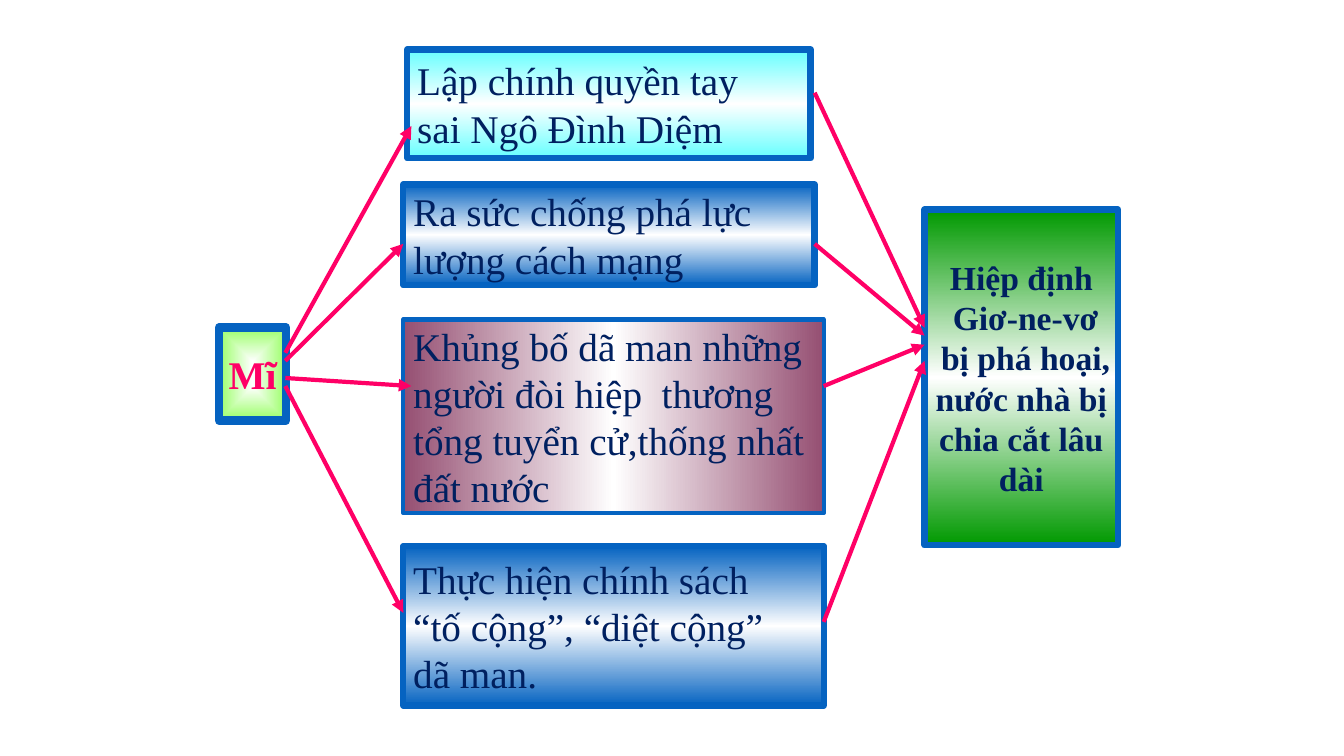
from pptx import Presentation
from pptx.dml.color import RGBColor
from pptx.enum.shapes import MSO_CONNECTOR, MSO_SHAPE
from pptx.enum.text import MSO_ANCHOR, PP_ALIGN
from pptx.oxml import parse_xml
from pptx.oxml.ns import nsdecls, qn
from pptx.util import Inches, Pt

THEME = {
    "font": "Times New Roman",
    "border": "0563C1", "ink": "002060", "accent": "FF0066", "white": "FFFFFF",
    "lime": "99FF66", "cyan": "66FFFF", "plum": "954F72", "green": "009900",
    "large": 28, "medium": 24, "arrow": 3,
}

# Boxes: place (left, top, width, height), tint, gradient, border width, lines
CAUSE = {
    "place": (2.17, 3.25, 0.67, 0.92), "tint": "lime", "gradient": "centre",
    "border": 6, "lines": ["Mĩ"],
}
ACTIONS = [
    {"place": (4.04, 0.49, 4, 1.08), "tint": "cyan", "gradient": "vertical",
     "border": 4.5, "lines": ["Lập chính quyền tay", "sai Ngô Đình Diệm"]},
    {"place": (4, 1.83, 4.08, 1), "tint": "border", "gradient": "vertical",
     "border": 4.5, "lines": ["Ra sức chống phá lực", "lượng cách mạng"]},
    {"place": (4, 3.17, 4.17, 1.92), "tint": "plum", "gradient": "horizontal",
     "border": 3, "lines": ["Khủng bố dã man những", "người đòi hiệp  thương",
                            "tổng tuyển cử,thống nhất", "đất nước"]},
    {"place": (4, 5.42, 4.17, 1.58), "tint": "border", "gradient": "vertical",
     "border": 4.5, "lines": ["Thực hiện chính sách", "“tố cộng”, “diệt cộng”",
                              "dã man."]},
]
RESULT = {
    "place": (9.17, 2.08, 1.92, 3.33), "tint": "green", "gradient": "vertical",
    "border": 4.5, "lines": ["Hiệp định", " Giơ-ne-vơ", " bị phá hoại,",
                             "nước nhà bị", "chia cắt lâu", "dài"],
}

# Arrows: the cause leads to each action, each action to the result
CAUSE_EDGE, RESULT_EDGE = 2.83, 9.17
ARROWS_IN = [(3.5, 4.08, 1.25), (3.58, 4, 2.42),
             (3.75, 4.08, 3.83), (3.83, 4, 6.08)]
ARROWS_OUT = [(8.08, 0.92, 3.25), (8.08, 2.42, 3.33),
              (8.17, 3.83, 3.42), (8.17, 6.17, 3.58)]


def color(name):
    return RGBColor.from_string(THEME[name])


def gradient_fill(tint, gradient):
    """Fade to white at the middle, along an axis or towards the centre."""
    if gradient == "centre":
        stops = [(0, "white"), (100, tint)]
        direction = ('<a:path path="shape"><a:fillToRect l="50000" t="50000" '
                     'r="50000" b="50000"/></a:path>')
    else:
        stops = [(0, tint), (50, "white"), (100, tint)]
        angle = 90 if gradient == "vertical" else 0
        direction = f'<a:lin ang="{angle * 60000}" scaled="1"/>'
    stop_xml = "".join(
        f'<a:gs pos="{position * 1000}"><a:srgbClr val="{THEME[name]}"/></a:gs>'
        for position, name in stops)
    return parse_xml(f'<a:gradFill {nsdecls("a")} rotWithShape="1">'
                     f'<a:gsLst>{stop_xml}</a:gsLst>{direction}</a:gradFill>')


def add_box(page, item, align, size="large", ink="ink", bold=False):
    box = page.shapes.add_shape(MSO_SHAPE.RECTANGLE, *map(Inches, item["place"]))
    box.shadow.inherit = False
    box.fill.gradient()
    properties = box.element.spPr
    properties.replace(properties.find(qn("a:gradFill")),
                       gradient_fill(item["tint"], item["gradient"]))
    box.line.color.rgb = color("border")
    box.line.width = Pt(item["border"])
    frame = box.text_frame
    frame.word_wrap = False
    frame.vertical_anchor = MSO_ANCHOR.MIDDLE
    for index, line in enumerate(item["lines"]):
        para = frame.add_paragraph() if index else frame.paragraphs[0]
        para.alignment = align
        span = para.add_run()
        span.text = line
        span.font.name = THEME["font"]
        span.font.size = Pt(THEME[size])
        span.font.bold = bold
        span.font.color.rgb = color(ink)


def add_arrow(page, *ends):
    arrow = page.shapes.add_connector(MSO_CONNECTOR.STRAIGHT, *map(Inches, ends))
    arrow.line.color.rgb = color("accent")
    arrow.line.width = Pt(THEME["arrow"])
    arrow.line._get_or_add_ln().append(
        parse_xml(f'<a:tailEnd {nsdecls("a")} type="triangle"/>'))
    arrow.element.spPr.append(parse_xml(f'<a:effectLst {nsdecls("a")}/>'))


def main():
    deck = Presentation()
    deck.slide_width, deck.slide_height = Inches(13.33), Inches(7.5)
    page = deck.slides.add_slide(deck.slide_layouts[6])

    # Boxes
    add_box(page, CAUSE, PP_ALIGN.CENTER, ink="accent", bold=True)
    for action in ACTIONS:
        add_box(page, action, PP_ALIGN.JUSTIFY)
    add_box(page, RESULT, PP_ALIGN.CENTER, size="medium", bold=True)

    # Arrows
    for start_y, end_x, end_y in ARROWS_IN:
        add_arrow(page, CAUSE_EDGE, start_y, end_x, end_y)
    for start_x, start_y, end_y in ARROWS_OUT:
        add_arrow(page, start_x, start_y, RESULT_EDGE, end_y)

    deck.save("out.pptx")


if __name__ == "__main__":
    main()
